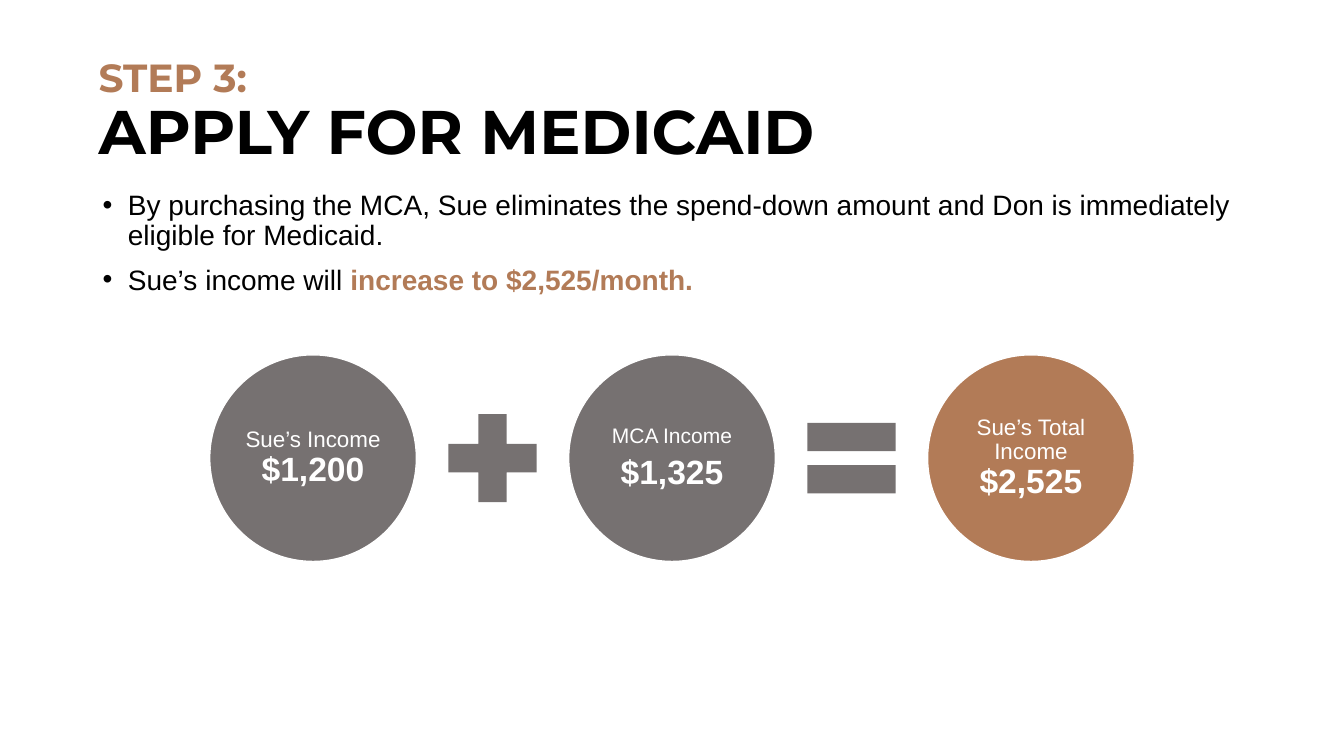
from dataclasses import dataclass

from lxml.etree import SubElement
from pptx import Presentation
from pptx.dml.color import RGBColor
from pptx.enum.shapes import MSO_SHAPE
from pptx.enum.text import MSO_ANCHOR, PP_ALIGN
from pptx.oxml.ns import qn
from pptx.util import Inches, Pt

COPPER, GRAY, BLACK, WHITE = "B27B57", "767171", "000000", "FFFFFF"
CIRCLE_SIZE, SIGN_SIZE, GAP = 2.05, 1.19, 0.16
EQUATION_LEFT, CIRCLE_TOP = 2.08, 3.52


@dataclass
class Income:
    label: str
    amount: str
    fill: str = GRAY
    label_size: int = 16
    own_paragraph: bool = False


INCOMES = [
    Income("Sue’s Income ", "$1,200"),
    Income("MCA Income", "$1,325", label_size=15, own_paragraph=True),
    Income("Sue’s Total Income ", "$2,525", fill=COPPER),
]
SIGNS = [MSO_SHAPE.MATH_PLUS, MSO_SHAPE.MATH_EQUAL]


def color(value: str) -> RGBColor:
    return RGBColor.from_string(value)


def add_text(paragraph, text: str, *, size: float, fill: str = BLACK,
             bold: bool = False, font: str = "Arial") -> None:
    run = paragraph.add_run()
    run.text = text
    run.font.name = font
    run.font.size = Pt(size)
    run.font.bold = bold
    run.font.color.rgb = color(fill)


def add_box(slide, left: float, top: float, width: float, height: float):
    box = slide.shapes.add_textbox(Inches(left), Inches(top), Inches(width), Inches(height))
    box.text_frame.word_wrap = True
    return box.text_frame


def add_shape(slide, kind: MSO_SHAPE, left: float, top: float, size: float, fill: str):
    shape = slide.shapes.add_shape(kind, Inches(left), Inches(top), Inches(size), Inches(size))
    shape.shadow.inherit = False
    shape.fill.solid()
    shape.fill.fore_color.rgb = color(fill)
    shape.line.fill.background()
    return shape


def make_bullet(paragraph) -> None:
    properties = paragraph._p.get_or_add_pPr()
    properties.set("marL", str(Inches(0.25)))
    properties.set("indent", str(-Inches(0.25)))
    SubElement(properties, qn("a:buFont")).set("typeface", "Arial")
    SubElement(properties, qn("a:buChar")).set("char", "•")
    paragraph.line_spacing = 0.9


def format_income(paragraph, size: float) -> None:
    paragraph.alignment = PP_ALIGN.CENTER
    paragraph.line_spacing = 0.9
    paragraph.space_after = Pt(round(0.35 * size, 1))


def add_income(slide, income: Income, left: float) -> None:
    circle = add_shape(slide, MSO_SHAPE.OVAL, left, CIRCLE_TOP, CIRCLE_SIZE, income.fill)
    circle.line.color.rgb = color(WHITE)
    circle.line.width = Pt(1)
    frame = circle.text_frame
    frame.word_wrap = True
    frame.vertical_anchor = MSO_ANCHOR.MIDDLE
    frame.margin_left = frame.margin_right = Inches(0.02)
    frame.margin_top = frame.margin_bottom = Inches(0.02)
    paragraph = frame.paragraphs[0]
    format_income(paragraph, income.label_size)
    add_text(paragraph, income.label, size=income.label_size, fill=WHITE)
    if income.own_paragraph:
        paragraph = frame.add_paragraph()
        format_income(paragraph, 24)
    add_text(paragraph, income.amount, size=24, fill=WHITE, bold=True)


def main() -> None:
    presentation = Presentation()
    presentation.slide_width = Inches(13.33)
    presentation.slide_height = Inches(7.5)
    slide = presentation.slides.add_slide(presentation.slide_layouts[6])

    # Title
    frame = add_box(slide, 0.88, 0.4, 11.54, 1.45)
    frame.vertical_anchor = MSO_ANCHOR.MIDDLE
    title = frame.paragraphs[0]
    title.line_spacing = 0.9
    add_text(title, "STEP 3: ", size=28, fill=COPPER, bold=True, font="Montserrat")
    title.add_line_break()
    add_text(title, "APPLY FOR MEDICAID", size=44, bold=True, font="Montserrat")

    # Bullets
    frame = add_box(slide, 0.92, 1.85, 11.97, 1.82)
    eligibility = frame.paragraphs[0]
    make_bullet(eligibility)
    add_text(eligibility, "By purchasing the MCA, Sue eliminates the spend-down amount "
             "and Don is immediately eligible for Medicaid.", size=20)
    increase = frame.add_paragraph()
    make_bullet(increase)
    increase.space_before = Pt(10)
    add_text(increase, "Sue’s income will ", size=20)
    add_text(increase, "increase to $2,525/month.", size=20, fill=COPPER, bold=True)

    # Income equation
    pitch = CIRCLE_SIZE + SIGN_SIZE + 2 * GAP
    for index, income in enumerate(INCOMES):
        add_income(slide, income, EQUATION_LEFT + index * pitch)
    sign_top = CIRCLE_TOP + (CIRCLE_SIZE - SIGN_SIZE) / 2
    for index, sign in enumerate(SIGNS):
        sign_left = EQUATION_LEFT + CIRCLE_SIZE + GAP + index * pitch
        add_shape(slide, sign, sign_left, sign_top, SIGN_SIZE, GRAY)

    presentation.save("out.pptx")


if __name__ == "__main__":
    main()
